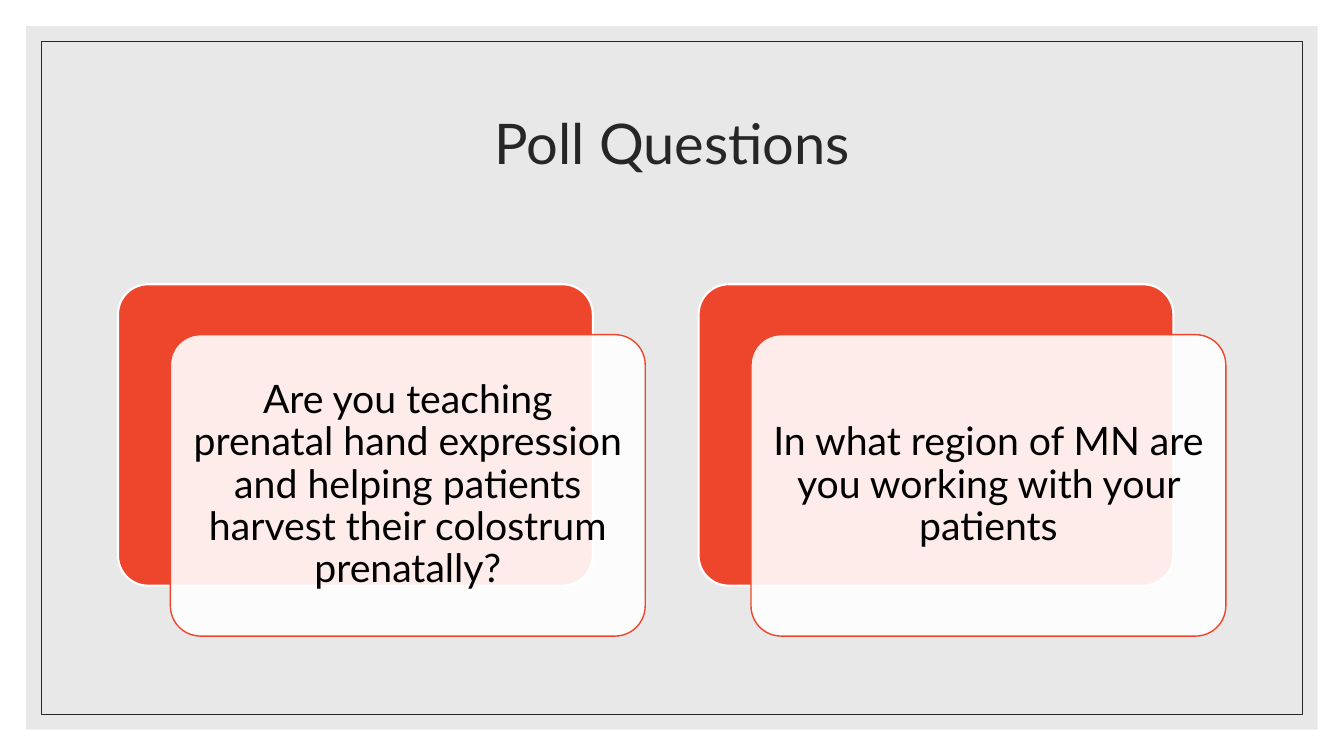
from dataclasses import dataclass, replace

from lxml import etree
from pptx import Presentation, util as u
from pptx.dml.color import RGBColor
from pptx.enum import shapes, text
from pptx.oxml.ns import qn

WIDE, HIGH = u.Inches(13.33), u.Inches(7.5)
FONT, RED, WHITE, INK = "Lato", "EE462D", "FFFFFF", "262626"
RECT = shapes.MSO_SHAPE.RECTANGLE
ROUND = shapes.MSO_SHAPE.ROUNDED_RECTANGLE


@dataclass(frozen=True)
class Box:
    """A place on the slide, in percent of its width and height."""
    x: float
    y: float
    w: float
    h: float

    def shift(self, dx: float, dy: float = 0) -> "Box":
        return replace(self, x=self.x + dx, y=self.y + dy)

    def emu(self) -> list[int]:
        sides = (WIDE, HIGH, WIDE, HIGH)
        parts = (self.x, self.y, self.w, self.h)
        return [round(side * part / 100) for side, part in zip(sides, parts)]


@dataclass(frozen=True)
class Style:
    kind: int = RECT
    fill: str | None = None
    alpha: int = 100
    line: str | None = None
    width: float = 1


def inset(x: float, y: float) -> Box:
    return Box(x, y, 100 - 2 * x, 100 - 2 * y)


def color(code: str) -> RGBColor:
    return RGBColor.from_string(code)


def draw(slide, box: Box, style: Style):
    shape = slide.shapes.add_shape(style.kind, *box.emu())
    shape.shadow.inherit = False
    if style.kind == ROUND:
        shape.adjustments[0] = 0.1
    if style.fill:
        shape.fill.solid()
        shape.fill.fore_color.rgb = color(style.fill)
        if style.alpha < 100:
            tone = shape.fill._xPr.find(".//" + qn("a:srgbClr"))
            etree.SubElement(tone, qn("a:alpha"), val=str(style.alpha * 1000))
    else:
        shape.fill.background()
    if style.line:
        shape.line.color.rgb = color(style.line)
        shape.line.width = u.Pt(style.width)
    else:
        shape.line.fill.background()
    return shape


def write(shape, words: str, size: int, ink: str, pad: float) -> None:
    frame = shape.text_frame
    frame.text = words
    frame.word_wrap = True
    frame.vertical_anchor = text.MSO_ANCHOR.MIDDLE
    frame.margin_left = frame.margin_right = u.Inches(pad)
    frame.margin_top = frame.margin_bottom = u.Inches(pad)
    para = frame.paragraphs[0]
    para.alignment = text.PP_ALIGN.CENTER
    para.line_spacing = 0.9
    font = para.runs[0].font
    font.name, font.size, font.color.rgb = FONT, u.Pt(size), color(ink)


PANELS = (
    (inset(0, 0), Style(fill=WHITE)),
    (inset(1.95, 3.47), Style(fill="D9D9D9", alpha=60)),
    (inset(3.06, 5.47), Style(line=INK, width=0.5)),
)
TITLE = Box(8.78, 9.33, 82.5, 20)
CARD = Box(8.78, 37.6, 35.33, 39.87)
PITCH = 43.2
BACK = Style(ROUND, RED, line=WHITE, width=1.5)
FRONT = Style(ROUND, WHITE, 90, RED)
POLLS = (
    "Are you teaching prenatal hand expression and helping patients "
    "harvest their colostrum prenatally?",
    "In what region of MN are you working with your patients",
)


def main() -> None:
    deck = Presentation()
    deck.slide_width, deck.slide_height = WIDE, HIGH
    slide = deck.slides.add_slide(deck.slide_layouts[6])
    for box, style in PANELS:
        draw(slide, box, style)
    title = slide.shapes.add_textbox(*TITLE.emu())
    write(title, "Poll Questions", 40, INK, 0.1)
    for col, poll in enumerate(POLLS):
        card = CARD.shift(col * PITCH)
        draw(slide, card, BACK)
        front = draw(slide, card.shift(3.9, 6.67), FRONT)
        write(front, poll, 28, "000000", 0.12)
    deck.save("out.pptx")


if __name__ == "__main__":
    main()
